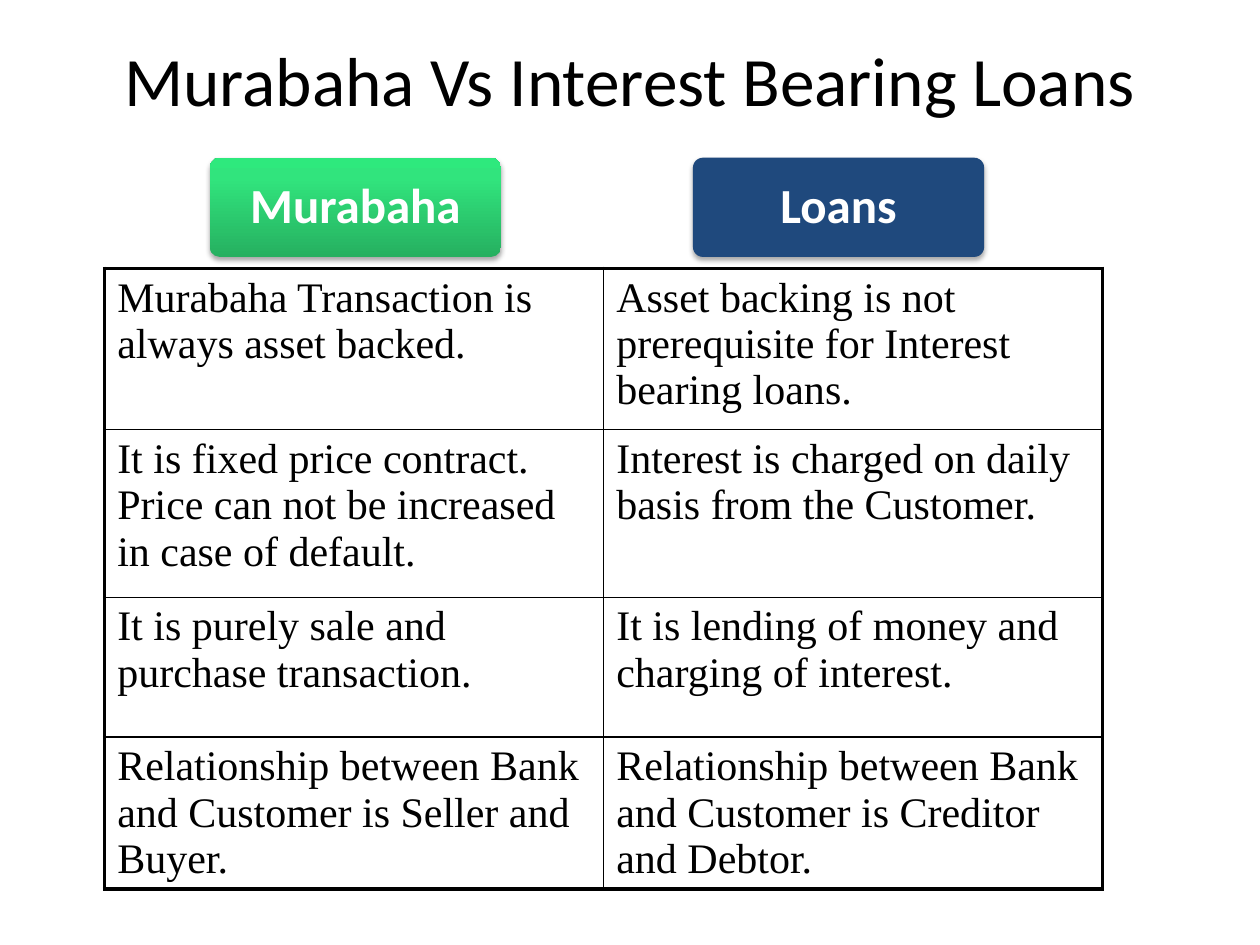
from dataclasses import dataclass

from lxml.etree import SubElement
from pptx import Presentation
from pptx.dml.color import RGBColor
from pptx.enum.shapes import MSO_SHAPE
from pptx.enum.text import MSO_ANCHOR, PP_ALIGN
from pptx.oxml import parse_xml
from pptx.oxml.ns import nsdecls, qn
from pptx.util import Cm, Pt

COLORS = {
    "text": "000000",
    "border": "000000",
    "shadow": "000000",
    "heading_text": "FFFFFF",
    "loans": "1F497D",
    "green_dark": "26B060",
    "green": "31E47D",
    "green_light": "2EE97D",
}
MURABAHA_GRADIENT = ((0, "green_dark"), (80, "green"), (100, "green_light"))
HEADING_TOP, HEADING_WIDTH, HEADING_HEIGHT = Cm(3.18), Cm(5.87), Cm(2)
TABLE_LEFT, TABLE_TOP, COLUMN_WIDTH = Cm(2.11), Cm(5.41), Cm(10.06)
ROW_HEIGHTS = (Cm(3.25), Cm(3.38), Cm(2.82), Cm(3.05))
OUTER_BORDER, INNER_BORDER = Pt(2.25), Pt(1)

TITLE_FONT = {"name": "Calibri", "size": Pt(39.6), "bold": False}
HEADING_FONT = {"name": "Calibri", "size": Pt(28), "bold": True}
CELL_FONT = {"name": "Times New Roman", "size": Pt(24), "bold": False}


@dataclass(frozen=True)
class Heading:
    text: str
    left: Cm
    fill: tuple[tuple[int, str], ...]


HEADINGS = (
    Heading("Loans", Cm(13.97), ((0, "loans"),)),
    Heading("Murabaha", Cm(4.23), MURABAHA_GRADIENT),
)
COMPARISON = (
    ("Murabaha Transaction is always asset backed.",
     "Asset backing is not prerequisite for Interest bearing loans."),
    ("It is fixed price contract. Price can not be increased in case of default.",
     "Interest is charged on daily basis from the Customer."),
    ("It is purely sale and purchase transaction.",
     "It is lending of money and charging of interest."),
    ("Relationship between Bank and Customer is Seller and Buyer.",
     "Relationship between Bank and Customer is Creditor and Debtor."),
)


def rgb(name: str) -> RGBColor:
    return RGBColor.from_string(COLORS[name])


def write_text(text_frame, text: str, font: dict, color: str, alignment) -> None:
    text_frame.word_wrap = True
    paragraph = text_frame.paragraphs[0]
    paragraph.alignment = alignment
    run = paragraph.add_run()
    run.text = text
    for attribute, value in font.items():
        setattr(run.font, attribute, value)
    run.font.color.rgb = rgb(color)


def add_title(slide, text: str) -> None:
    title = slide.shapes.title
    title.left, title.top, title.width, title.height = Cm(1.27), Cm(0), Cm(22.86), Cm(3.18)
    title.text_frame.vertical_anchor = MSO_ANCHOR.MIDDLE
    write_text(title.text_frame, text, TITLE_FONT, "text", PP_ALIGN.CENTER)


def fill_upward(shape, stops: tuple[tuple[int, str], ...]) -> None:
    """Fill with one colour, or with a gradient running from bottom to top."""
    if len(stops) == 1:
        shape.fill.solid()
        shape.fill.fore_color.rgb = rgb(stops[0][1])
        return
    stop_xml = "".join(
        f'<a:gs pos="{percent * 1000}"><a:srgbClr val="{COLORS[name]}"/></a:gs>'
        for percent, name in stops
    )
    gradient = parse_xml(
        f'<a:gradFill {nsdecls("a")} rotWithShape="1"><a:gsLst>{stop_xml}</a:gsLst>'
        '<a:lin ang="16200000" scaled="0"/></a:gradFill>'
    )
    shape._element.spPr.find(qn("a:prstGeom")).addnext(gradient)


def add_soft_shadow(shape) -> None:
    shape.shadow.inherit = False
    effects = shape._element.spPr.find(qn("a:effectLst"))
    shadow = SubElement(effects, qn("a:outerShdw"), blurRad=str(Pt(3.1)), dist=str(Pt(1.8)),
                        dir="5400000", rotWithShape="0")
    color = SubElement(shadow, qn("a:srgbClr"), val=COLORS["shadow"])
    SubElement(color, qn("a:alpha"), val="35000")


def add_heading(slide, heading: Heading) -> None:
    shape = slide.shapes.add_shape(
        MSO_SHAPE.ROUNDED_RECTANGLE, heading.left, HEADING_TOP, HEADING_WIDTH, HEADING_HEIGHT
    )
    shape.adjustments[0] = 0.1
    fill_upward(shape, heading.fill)
    shape.line.fill.background()
    add_soft_shadow(shape)
    text_frame = shape.text_frame
    text_frame.vertical_anchor = MSO_ANCHOR.MIDDLE
    write_text(text_frame, heading.text, HEADING_FONT, "heading_text", PP_ALIGN.CENTER)
    text_frame.paragraphs[0].line_spacing = 0.9


def set_borders(cell, widths: dict[str, int]) -> None:
    """Draw the borders, given in the order left, right, top, bottom."""
    properties = cell._tc.get_or_add_tcPr()
    for position, (side, width) in enumerate(widths.items()):
        border = parse_xml(
            f'<a:ln{side} {nsdecls("a")} w="{width}"><a:solidFill>'
            f'<a:srgbClr val="{COLORS["border"]}"/></a:solidFill></a:ln{side}>'
        )
        properties.insert(position, border)


def add_comparison_table(slide, rows: tuple[tuple[str, str], ...]) -> None:
    last_row, last_column = len(rows) - 1, len(rows[0]) - 1
    table = slide.shapes.add_table(
        len(rows), len(rows[0]), TABLE_LEFT, TABLE_TOP,
        COLUMN_WIDTH * len(rows[0]), sum(ROW_HEIGHTS),
    ).table
    table.first_row = table.horz_banding = False
    for column in table.columns:
        column.width = COLUMN_WIDTH
    for row_index, texts in enumerate(rows):
        table.rows[row_index].height = ROW_HEIGHTS[row_index]
        for column_index, text in enumerate(texts):
            cell = table.cell(row_index, column_index)
            cell.fill.background()
            write_text(cell.text_frame, text, CELL_FONT, "text", PP_ALIGN.LEFT)
            on_edge = {
                "L": column_index == 0,
                "R": column_index == last_column,
                "T": row_index == 0,
                "B": row_index == last_row,
            }
            set_borders(cell, {side: OUTER_BORDER if edge else INNER_BORDER
                               for side, edge in on_edge.items()})


def main() -> None:
    presentation = Presentation()
    presentation.slide_width, presentation.slide_height = Cm(25.4), Cm(19.05)
    slide = presentation.slides.add_slide(presentation.slide_layouts.get_by_name("Title Only"))
    add_comparison_table(slide, COMPARISON)
    add_title(slide, "Murabaha Vs Interest Bearing Loans")
    for heading in HEADINGS:
        add_heading(slide, heading)
    presentation.save("out.pptx")


if __name__ == "__main__":
    main()
